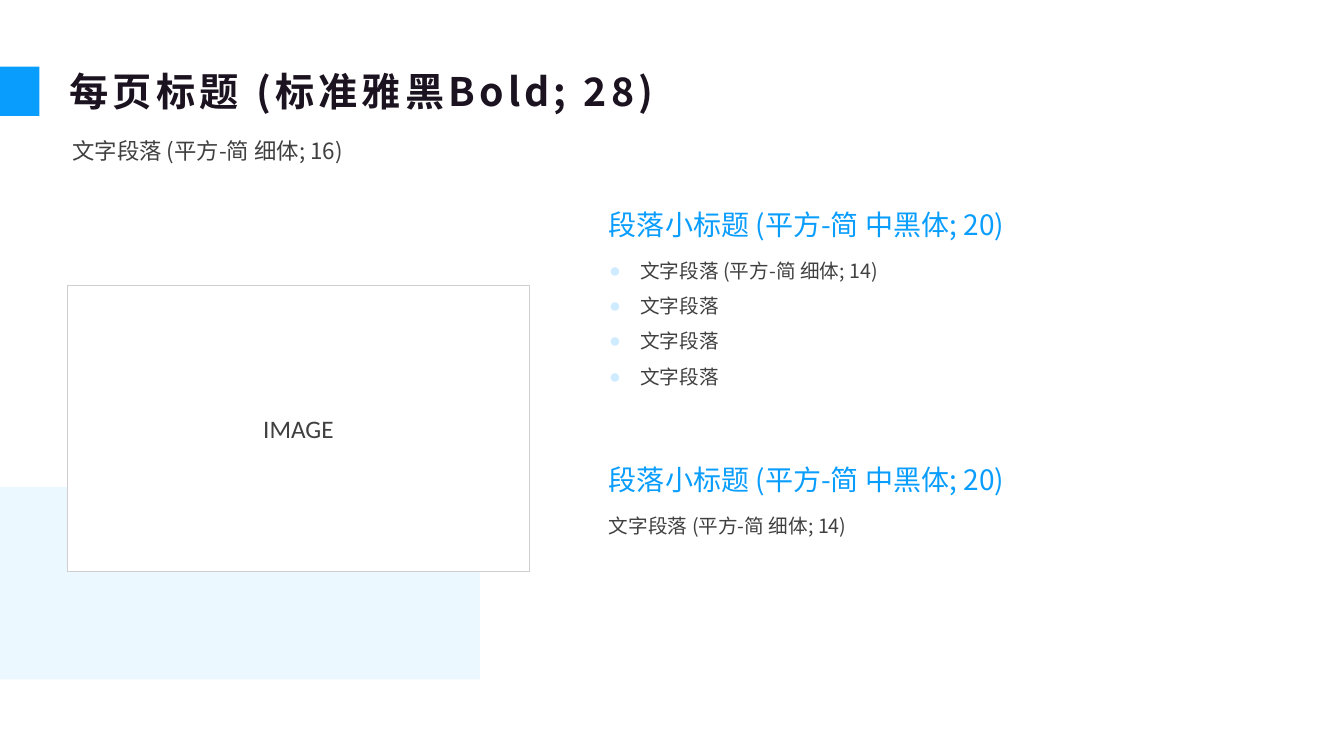
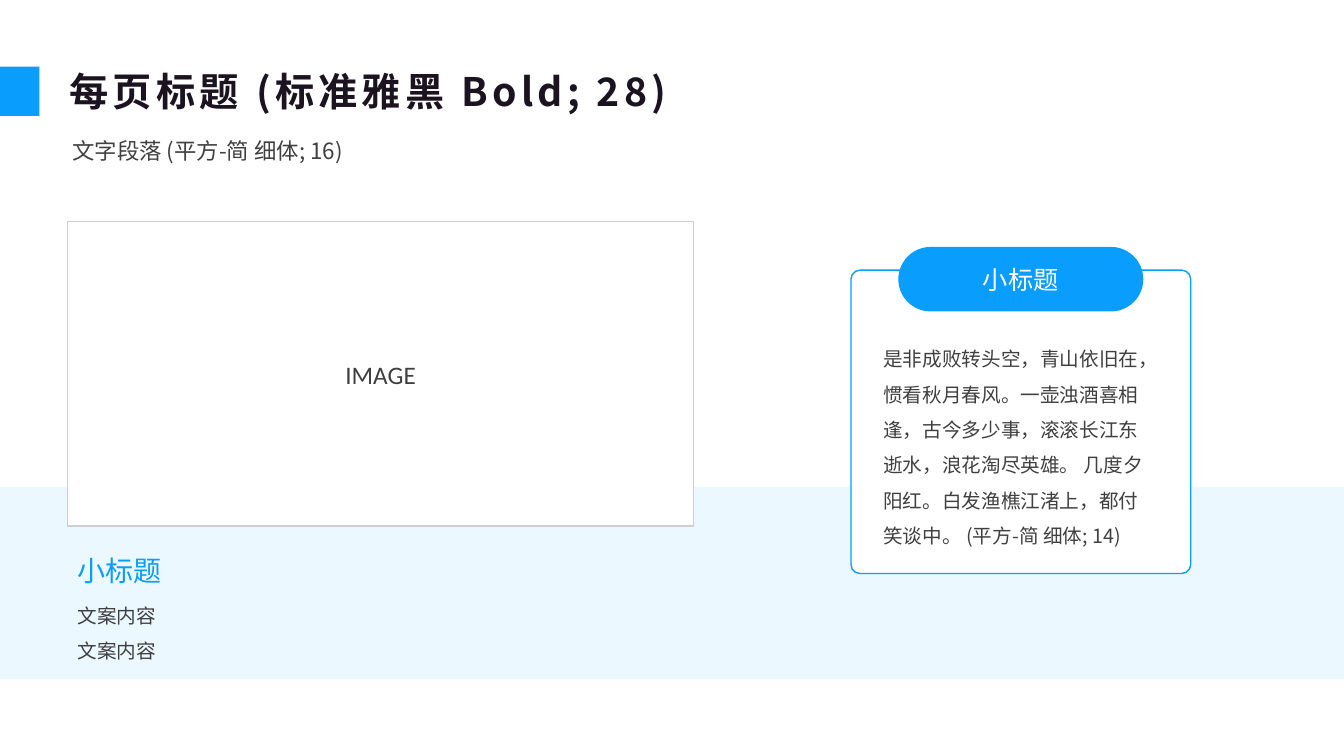
"""Build two template slides: image beside paragraphs, and image beside a quote card."""
from dataclasses import dataclass

from lxml.etree import SubElement
from pptx import Presentation
from pptx.dml.color import RGBColor
from pptx.enum.shapes import MSO_SHAPE
from pptx.enum.text import MSO_ANCHOR, MSO_AUTO_SIZE, PP_ALIGN
from pptx.oxml.ns import qn
from pptx.util import Inches, Pt


@dataclass(frozen=True)
class Theme:
    accent: str = "099DFD"
    band: str = "D9F3FF"
    bullet: str = "CEEBFF"
    title: str = "1C1320"
    text: str = "404040"
    frame: str = "D0CECE"
    white: str = "FFFFFF"
    font: str = "Noto Sans CJK SC"
    latin_font: str = "Calibri"
    title_size: int = 28
    heading_size: int = 20
    label_size: int = 18
    lead_size: int = 16
    body_size: int = 14


theme = Theme()


def add_block(shapes, kind, box, fill, line=None):
    block = shapes.add_shape(kind, *map(Inches, box))
    block.shadow.inherit = False
    block.fill.solid()
    block.fill.fore_color.rgb = RGBColor.from_string(fill)
    if line:
        block.line.color.rgb = RGBColor.from_string(line)
        block.line.width = Pt(1)
    else:
        block.line.fill.background()
    return block


def write(shape, lines, size, color, box=None, inset=(0.05, 0.05), spacing=1.5,
          anchor=MSO_ANCHOR.TOP, align=PP_ALIGN.LEFT, font=theme.font,
          bold=False, tracking=0, bulleted=False):
    if box:
        shape.left, shape.top, shape.width, shape.height = map(Inches, box)
    frame = shape.text_frame
    frame.word_wrap = True
    frame.auto_size = MSO_AUTO_SIZE.NONE
    frame.vertical_anchor = anchor
    frame.margin_left = frame.margin_right = Inches(inset[0])
    frame.margin_top = frame.margin_bottom = Inches(inset[1])
    for index, line in enumerate(lines):
        paragraph = frame.add_paragraph() if index else frame.paragraphs[0]
        paragraph.text = line
        properties = paragraph._p.get_or_add_pPr()
        indent = Inches(0.31) if bulleted else 0
        properties.set("marL", str(indent))
        properties.set("indent", str(-indent))
        if bulleted:
            bullet_color = SubElement(properties, qn("a:buClr"))
            SubElement(bullet_color, qn("a:srgbClr"), val=theme.bullet)
            SubElement(properties, qn("a:buChar"), char="●")
        else:
            SubElement(properties, qn("a:buNone"))
        paragraph.alignment = align
        paragraph.line_spacing = spacing
        paragraph.space_before = Pt(0)
        paragraph.font.size = Pt(size)
        paragraph.font.bold = bold
        paragraph.font.color.rgb = RGBColor.from_string(color)
        paragraph.font.name = font
        defaults = properties.find(qn("a:defRPr"))
        defaults.set("spc", str(tracking * 100))
        SubElement(defaults, qn("a:ea"), typeface=font)


presentation = Presentation()
presentation.slide_width = Inches(13.33)
presentation.slide_height = Inches(7.5)
layout = presentation.slide_layouts[3]

left = 0.67
pages = [
    ("每页标题 (标准雅黑Bold; 28)", 4.76, (left, 2.83, 4.58, 2.84)),
    ("每页标题 (标准雅黑 Bold; 28)", 13.33, (left, 2.2, 6.21, 3.02)),
]
slides = []
for title, band_width, image_box in pages:
    slide = presentation.slides.add_slide(layout)
    slides.append(slide)
    band = add_block(slide.shapes, MSO_SHAPE.RECTANGLE, (0, 4.83, band_width, 1.91), theme.band)
    band_color = next(band._element.spPr.iter(qn("a:srgbClr")))
    SubElement(band_color, qn("a:alpha"), val="50000")
    slide.shapes._spTree.insert(2, band._element)
    add_block(slide.shapes, MSO_SHAPE.RECTANGLE, (0, 0.66, 0.39, 0.49), theme.accent)
    write(slide.shapes.title, [title], theme.title_size, theme.title, (left, 0.57, 11.79, 0.66),
          inset=(0.02, 0.02), spacing=1.0, anchor=MSO_ANCHOR.MIDDLE, bold=True, tracking=3)
    write(slide.placeholders[1], ["文字段落 (平方-简 细体; 16)"], theme.lead_size, theme.text,
          (left, 1.18, 11.79, 0.47))
    image_area = add_block(slide.shapes, MSO_SHAPE.RECTANGLE, image_box, theme.white, theme.frame)
    write(image_area, ["IMAGE"], theme.label_size, theme.text, inset=(0.1, 0.05), spacing=1.0,
          anchor=MSO_ANCHOR.MIDDLE, align=PP_ALIGN.CENTER, font=theme.latin_font)

paragraph_slide, card_slide = slides

column, column_width = 5.99, 4.9
paragraph_text = "文字段落 (平方-简 细体; 14)"
for heading_top in (1.84, 4.37):
    heading = paragraph_slide.shapes.add_textbox(0, 0, 0, 0)
    write(heading, ["段落小标题 (平方-简 中黑体; 20)"], theme.heading_size, theme.accent,
          (column, heading_top, column_width, 0.56))
write(paragraph_slide.placeholders[2], [paragraph_text] + ["文字段落"] * 3, theme.body_size,
      theme.text, (column, 2.4, column_width, 1.48), bulleted=True)
closing = paragraph_slide.shapes.add_textbox(0, 0, 0, 0)
write(closing, [paragraph_text], theme.body_size, theme.text, (column, 4.93, column_width, 0.42))

caption = card_slide.shapes.add_textbox(0, 0, 0, 0)
write(caption, ["小标题"], theme.heading_size, theme.accent, (left, 5.44, 7.31, 0.44),
      inset=(0.1, 0.05), spacing=1.0)
write(card_slide.placeholders[2], ["文案内容"] * 2, theme.body_size, theme.text,
      (left, 5.82, 10.42, 0.78), inset=(0.1, 0.05))

card = card_slide.shapes.add_group_shape().shapes
outline = add_block(card, MSO_SHAPE.ROUNDED_RECTANGLE, (8.44, 2.68, 3.37, 3.01),
                    theme.white, theme.accent)
outline.adjustments[0] = 0.03
badge = add_block(card, MSO_SHAPE.ROUNDED_RECTANGLE, (8.91, 2.45, 2.43, 0.64), theme.accent)
badge.adjustments[0] = 0.5
write(badge, ["小标题"], theme.label_size, theme.white, inset=(0.1, 0.05), spacing=1.0,
      anchor=MSO_ANCHOR.MIDDLE, align=PP_ALIGN.CENTER)
poem = card.add_textbox(*map(Inches, (8.71, 3.28, 2.82, 2.24)))
write(poem, ["是非成败转头空，青山依旧在，惯看秋月春风。一壶浊酒喜相逢，古今多少事，"
             "滚滚长江东逝水，浪花淘尽英雄。 几度夕阳红。白发渔樵江渚上，都付笑谈中。"
             " (平方-简 细体; 14)"], theme.body_size, theme.text)

presentation.save("out.pptx")
